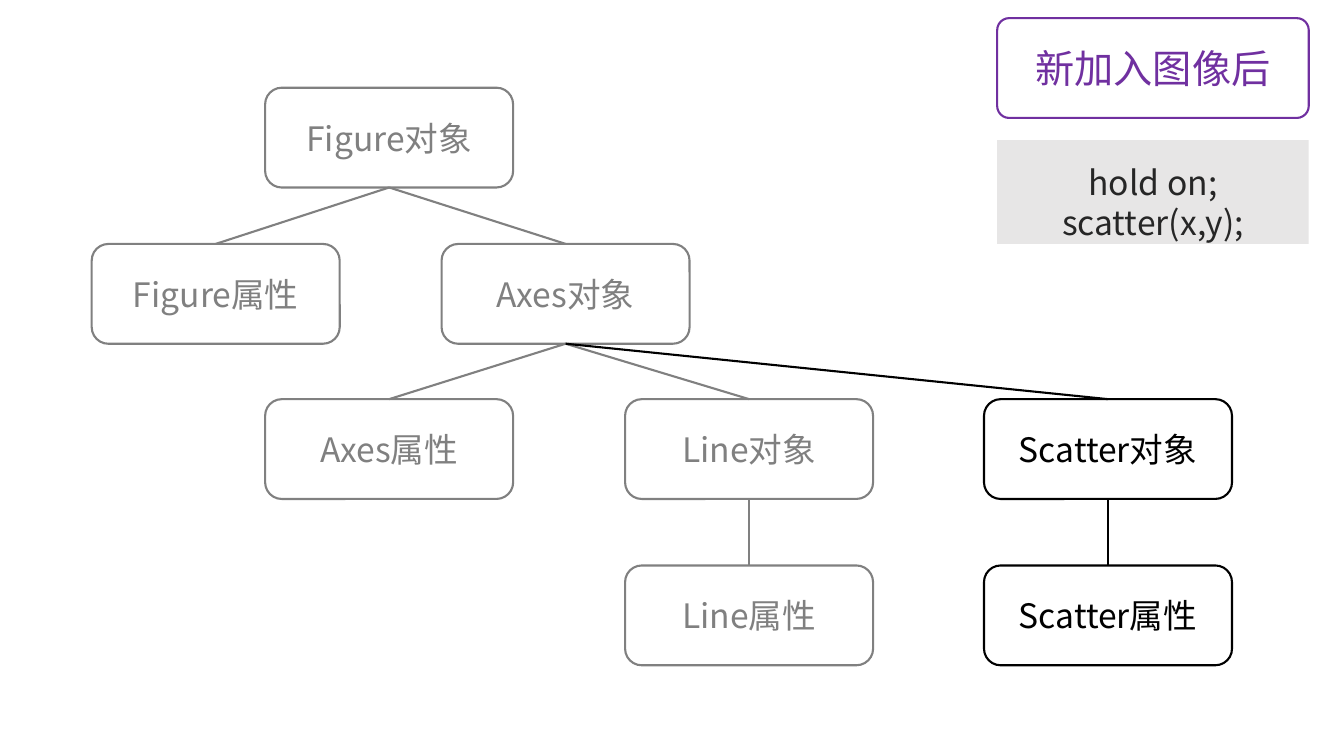
import pptx
import pptx.dml.color
import pptx.enum.shapes
import pptx.enum.text
import pptx.oxml
import pptx.oxml.ns
import pptx.util

Inches = pptx.util.Inches
Pt = pptx.util.Pt
RGBColor = pptx.dml.color.RGBColor
Shape = pptx.enum.shapes.MSO_SHAPE

FONT = "Noto Sans CJK SC"
WHITE = RGBColor(0xFF, 0xFF, 0xFF)
GRAY = RGBColor(0x80, 0x80, 0x80)
BLACK = RGBColor(0x00, 0x00, 0x00)
PURPLE = RGBColor(0x70, 0x30, 0xA0)
CODE_FILL = RGBColor(0xE7, 0xE6, 0xE6)
CODE_TEXT = RGBColor(0x26, 0x26, 0x26)

# Text, left edge, tree level, colour
NODES = [
    ("Figure对象", 2.63, 0, GRAY),
    ("Figure属性", 0.91, 1, GRAY),
    ("Axes对象", 4.38, 1, GRAY),
    ("Axes属性", 2.63, 2, GRAY),
    ("Line对象", 6.2, 2, GRAY),
    ("Line属性", 6.2, 3, GRAY),
    ("Scatter对象", 9.76, 2, BLACK),
    ("Scatter属性", 9.76, 3, BLACK),
]
# Parent, child, colour
LINKS = [
    ("Figure对象", "Figure属性", GRAY),
    ("Figure对象", "Axes对象", GRAY),
    ("Axes对象", "Axes属性", GRAY),
    ("Axes对象", "Line对象", GRAY),
    ("Line对象", "Line属性", GRAY),
    ("Scatter对象", "Scatter属性", BLACK),
    ("Axes对象", "Scatter对象", BLACK),
]
HEADING = "新加入图像后"
CODE_LINES = ["hold on;", "scatter(x,y);"]

LEVEL_TOPS = [0.87, 2.42, 3.96, 5.61]
NODE_WIDTH, BOX_HEIGHT = 2.46, 0.99
SIDE_LEFT, SIDE_WIDTH = 9.89, 3.09
LINE_WIDTH = Pt(1.5)


def add_box(page, kind, bounds, lines, size, color, fill=WHITE, outline=None):
    box = page.shapes.add_shape(kind, *[Inches(value) for value in bounds])
    box.shadow.inherit = False
    box.fill.solid()
    box.fill.fore_color.rgb = fill
    if outline is None:
        box.line.fill.background()
    else:
        box.line.color.rgb = outline
        box.line.width = LINE_WIDTH
    frame = box.text_frame
    frame.word_wrap = True
    frame.vertical_anchor = pptx.enum.text.MSO_ANCHOR.MIDDLE
    for index, line in enumerate(lines):
        para = frame.add_paragraph() if index else frame.paragraphs[0]
        para.alignment = pptx.enum.text.PP_ALIGN.CENTER
        span = para.add_run()
        span.text = line
        span.font.size = Pt(size)
        span.font.color.rgb = color
        span.font.name = FONT
        east_asian = pptx.oxml.parse_xml(
            f'<a:ea {pptx.oxml.ns.nsdecls("a")} typeface="{FONT}"/>')
        span.font._element.append(east_asian)
    return box


def add_link(page, parent, child, color):
    """Join the bottom of the parent box to the top of the child box."""
    link = page.shapes.add_connector(
        pptx.enum.shapes.MSO_CONNECTOR.STRAIGHT, 0, 0, 0, 0)
    link.begin_connect(parent, 2)
    link.end_connect(child, 0)
    link.line.color.rgb = color
    link.line.width = LINE_WIDTH
    link._element.spPr.append(pptx.oxml.parse_xml(
        f'<a:effectLst {pptx.oxml.ns.nsdecls("a")}/>'))


def main():
    deck = pptx.Presentation()
    deck.slide_width, deck.slide_height = Inches(13.33), Inches(7.5)
    page = deck.slides.add_slide(deck.slide_layouts[6])

    boxes = {}
    for text, left, level, color in NODES:
        bounds = (left, LEVEL_TOPS[level], NODE_WIDTH, BOX_HEIGHT)
        boxes[text] = add_box(page, Shape.ROUNDED_RECTANGLE, bounds, [text],
                              24, color, outline=color)
    for parent, child, color in LINKS:
        add_link(page, boxes[parent], boxes[child], color)

    heading = add_box(page, Shape.ROUNDED_RECTANGLE,
                      (SIDE_LEFT, 0.18, SIDE_WIDTH, BOX_HEIGHT), [HEADING],
                      28, PURPLE, outline=PURPLE)
    heading.adjustments[0] = 0.12
    code = add_box(page, Shape.RECTANGLE, (SIDE_LEFT, 1.39, SIDE_WIDTH, 1.03),
                   CODE_LINES, 24, CODE_TEXT, fill=CODE_FILL)
    code.text_frame.paragraphs[0].line_spacing = 1.5

    deck.save("out.pptx")


if __name__ == "__main__":
    main()
